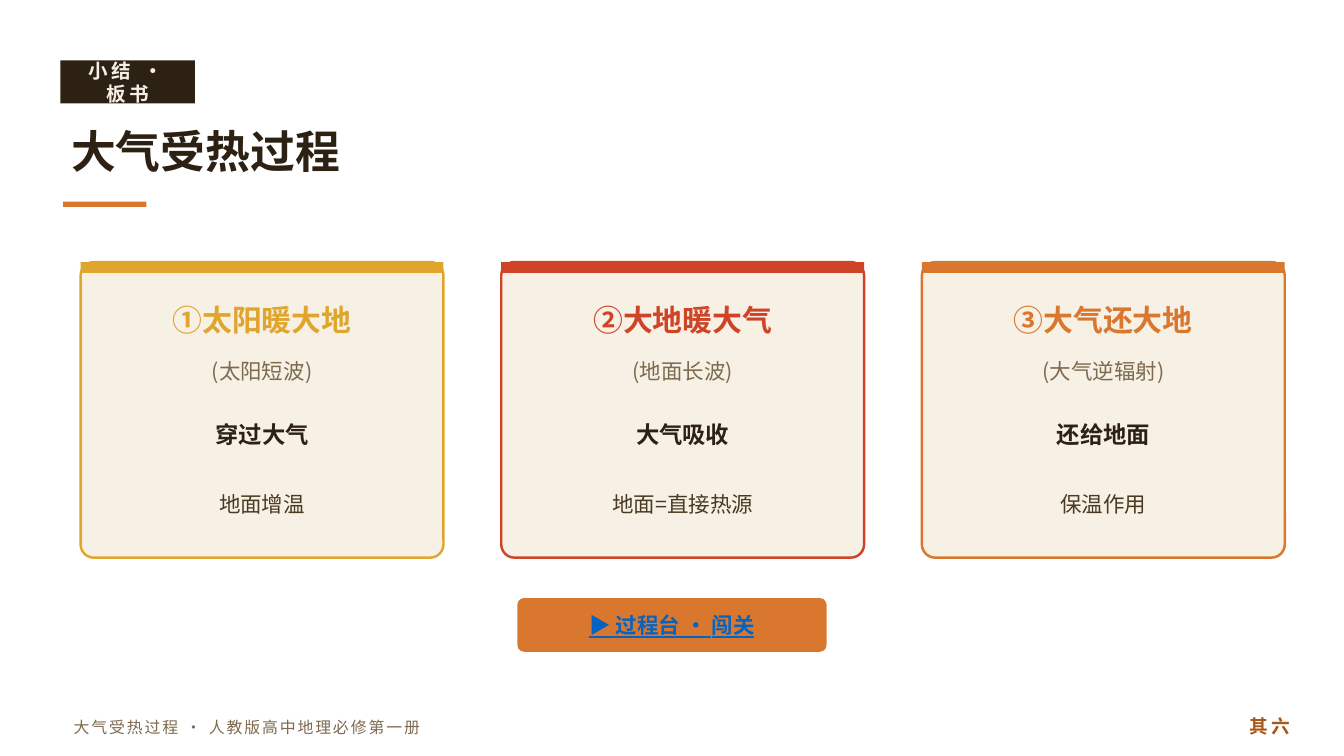
from lxml import etree
from pptx import Presentation
from pptx.dml.color import RGBColor
from pptx.enum.shapes import MSO_SHAPE
from pptx.enum.text import MSO_ANCHOR, MSO_AUTO_SIZE, PP_ALIGN
from pptx.oxml.ns import qn
from pptx.util import Inches, Pt

RECTANGLE, ROUNDED = MSO_SHAPE.RECTANGLE, MSO_SHAPE.ROUNDED_RECTANGLE
LEFT, CENTER, RIGHT = PP_ALIGN.LEFT, PP_ALIGN.CENTER, PP_ALIGN.RIGHT
MIDDLE = MSO_ANCHOR.MIDDLE
NO_AUTOSIZE = MSO_AUTO_SIZE.NONE

FONT = "Noto Sans CJK SC"
INK, BROWN, MUTED = "2C2113", "4A3A23", "7D6A4F"
CREAM, PALE = "F7F0E4", "F6EFE5"
YELLOW, RED, ORANGE, RUST = "E0A52C", "CF4326", "D9772F", "A85718"
LINK_BLUE = "0563C1"

CARD_WIDTH, CARD_HEIGHT, CARD_STEP = 2.7, 2.2, 3.13
CARDS = [
    (YELLOW, "①太阳暖大地", "(太阳短波)", "穿过大气", "地面增温"),
    (RED, "②大地暖大气", "(地面长波)", "大气吸收", "地面=直接热源"),
    (ORANGE, "③大气还大地", "(大气逆辐射)", "还给地面", "保温作用"),
]


def color(value):
    return RGBColor.from_string(value)


def fill_text(box, text, size, ink, bold=False, align=CENTER, spacing=0, underline=False):
    frame = box.text_frame
    frame.word_wrap = True
    frame.auto_size = NO_AUTOSIZE
    frame.vertical_anchor = MIDDLE
    para = frame.paragraphs[0]
    para.alignment = align
    span = para.add_run()
    span.text = text
    font = span.font
    font.name, font.size, font.bold = FONT, Pt(size), bold
    font.color.rgb = color(ink)
    if underline:
        font.underline = True
    # East Asian typeface and letter spacing
    properties = span._r.get_or_add_rPr()
    etree.SubElement(properties, qn("a:ea"), typeface=FONT)
    if spacing:
        properties.set("spc", str(spacing * 100))


def add_text(page, left, top, width, height, text, size, ink, **style):
    box = page.shapes.add_textbox(Inches(left), Inches(top), Inches(width), Inches(height))
    fill_text(box, text, size, ink, **style)


def add_block(page, left, top, width, height, fill, line=None, rounding=None):
    kind = RECTANGLE if rounding is None else ROUNDED
    block = page.shapes.add_shape(kind, Inches(left), Inches(top), Inches(width), Inches(height))
    block.shadow.inherit = False
    block.fill.solid()
    block.fill.fore_color.rgb = color(fill)
    if rounding is not None:
        block.adjustments[0] = rounding
    if line:
        block.line.color.rgb = color(line)
        block.line.width = Pt(1.3)
    else:
        block.line.fill.background()


def add_header(page, left, top):
    # Section tag
    add_block(page, left, top, 1, 0.32, INK)
    add_text(page, left, top - 0.01, 1, 0.34, "小结 · 板书", 10.5, PALE, bold=True, spacing=2)
    # Title with accent rule
    title = page.shapes.title
    title.left, title.top = Inches(left - 0.02), Inches(top + 0.37)
    title.width, title.height = Inches(9), Inches(0.6)
    fill_text(title, "大气受热过程", 24, INK, bold=True, align=LEFT)
    add_block(page, left + 0.02, top + 1.05, 0.62, 0.04, ORANGE)


def add_card(page, left, top, width, height, accent, heading, source, action, result):
    add_block(page, left, top, width, height, CREAM, line=accent, rounding=0.045)
    add_block(page, left, top, width, 0.08, accent)
    rows = [
        (0.2, 0.45, heading, 16, accent, True),
        (0.65, 0.32, source, 11.5, MUTED, False),
        (1.1, 0.36, action, 12.5, INK, True),
        (1.55, 0.5, result, 11.5, BROWN, False),
    ]
    for offset, row_height, text, size, ink, bold in rows:
        add_text(page, left, top + offset, width, row_height, text, size, ink, bold=bold)


def add_button(page, left, top, width, height):
    add_block(page, left, top, width, height, ORANGE, rounding=0.125)
    add_text(page, left, top - 0.01, width, height + 0.02, "▶ 过程台 · 闯关", 11.5,
             LINK_BLUE, bold=True, underline=True)


def add_footer(page, left, top):
    add_text(page, left, top + 0.02, 6.6, 0.3, "大气受热过程 · 人教版高中地理必修第一册", 8.5,
             MUTED, align=LEFT, spacing=1)
    add_text(page, left + 8.65, top, 0.6, 0.32, "其 六", 10, RUST, bold=True, align=RIGHT)


def main():
    deck = Presentation()
    # Widescreen, 16 to 9
    deck.slide_width = Inches(10)
    deck.slide_height = deck.slide_width * 9 // 16
    page = deck.slides.add_slide(deck.slide_layouts[5])
    page.background.fill.solid()
    page.background.fill.fore_color.rgb = color("FFFFFF")

    add_header(page, 0.45, 0.45)
    for index, card in enumerate(CARDS):
        add_card(page, 0.6 + index * CARD_STEP, 1.95, CARD_WIDTH, CARD_HEIGHT, *card)
    add_button(page, 3.85, 4.45, 2.3, 0.4)
    add_footer(page, 0.45, 5.24)
    deck.save("out.pptx")


if __name__ == "__main__":
    main()
